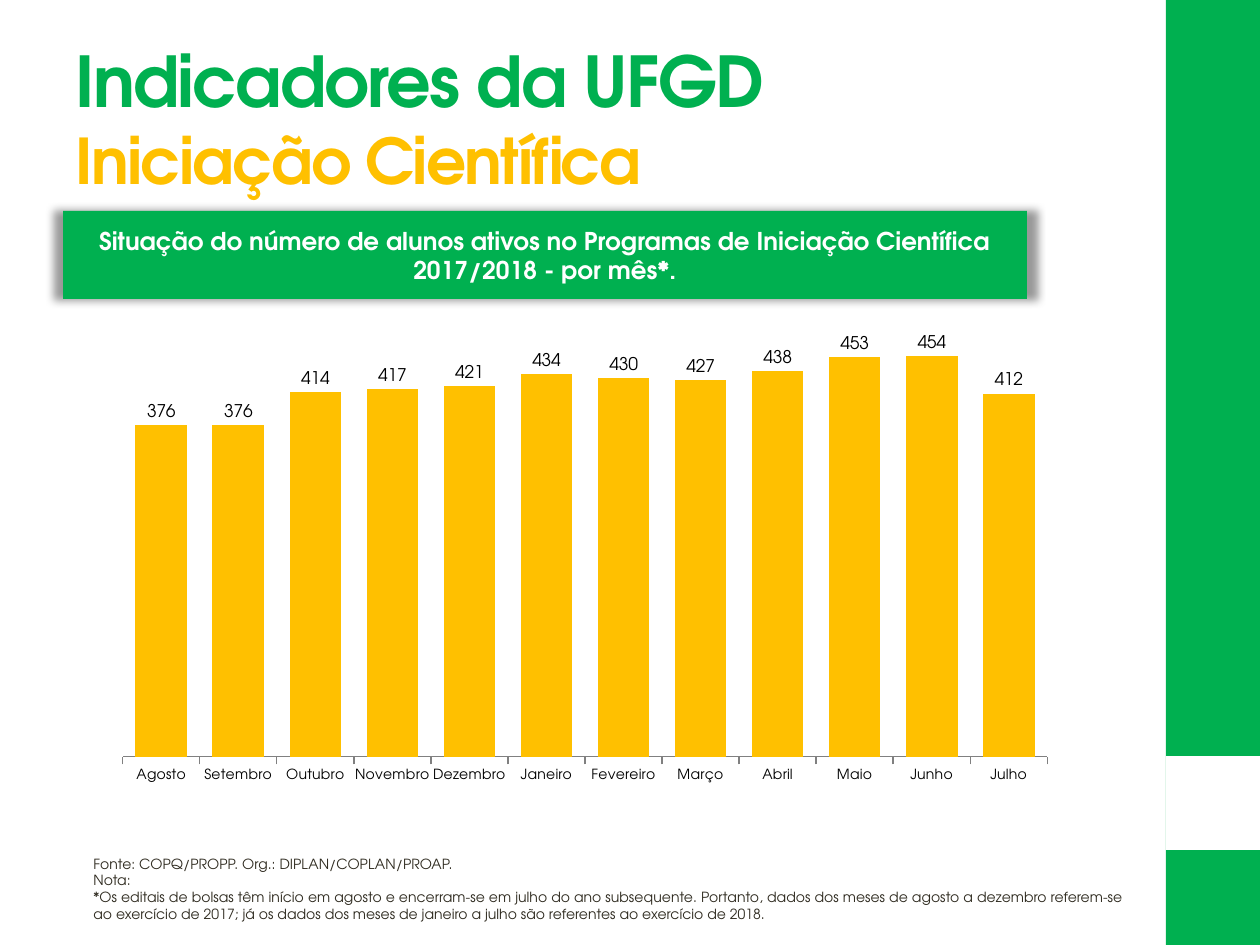
import pptx
import pptx.util
import pptx.chart.data
import pptx.dml.color
import pptx.enum.chart
import pptx.enum.shapes
import pptx.enum.text
import pptx.oxml
import pptx.oxml.ns

ALIGN = pptx.enum.text.PP_ALIGN
ANCHOR = pptx.enum.text.MSO_ANCHOR


class Theme:
    font = "TeX Gyre Adventor"
    green, amber, white = "00B050", "FFC000", "FFFFFF"
    ink, black, grey = "2F2B20", "000000", "808080"
    title, subtitle, banner, label, small = 40, 36, 14, 10, 8


def px(length):
    return pptx.util.Emu(round(length * 914400 / 126))


def rgb(colour):
    return pptx.dml.color.RGBColor.from_string(colour)


def format_font(font, size, colour, bold=False):
    font.name = Theme.font
    font.size = pptx.util.Pt(size)
    font.bold = bold
    font.color.rgb = rgb(colour)


def write(para, text, *, size, colour, bold=False, align=None, spacing=None, before=None):
    span = para.add_run()
    span.text = text
    format_font(span.font, size, colour, bold)
    if align is not None:
        para.alignment = align
    if before is not None:
        para.space_before = pptx.util.Pt(before)
    if spacing is not None:
        span.font._element.set("spc", str(spacing * 100))


class Page:
    def __init__(self, deck, theme):
        self.theme = theme
        self.slide = deck.slides.add_slide(deck.slide_layouts[6])

    def rectangle(self, left, top, width, height, colour):
        box = self.slide.shapes.add_shape(
            pptx.enum.shapes.MSO_SHAPE.RECTANGLE, px(left), px(top), px(width), px(height))
        box.shadow.inherit = False
        box.fill.solid()
        box.fill.fore_color.rgb = rgb(colour)
        box.line.fill.background()
        frame = box.text_frame
        frame.word_wrap = True
        frame.vertical_anchor = ANCHOR.MIDDLE
        return box

    def glow_shadow(self, box):
        effects = box._element.spPr.find(pptx.oxml.ns.qn("a:effectLst"))
        effects.append(pptx.oxml.parse_xml(
            f'<a:outerShdw {pptx.oxml.ns.nsdecls("a")} blurRad="63500" sx="102000" sy="102000" '
            'algn="ctr" rotWithShape="0"><a:srgbClr val="000000"><a:alpha val="40000"/>'
            '</a:srgbClr></a:outerShdw>'))

    def text_box(self, left, top, width, height, anchor=ANCHOR.TOP):
        box = self.slide.shapes.add_textbox(px(left), px(top), px(width), px(height))
        box.text_frame.word_wrap = True
        box.text_frame.vertical_anchor = anchor
        return box.text_frame

    def column_chart(self, left, top, width, height, name, values, plot_area):
        theme = self.theme
        data = pptx.chart.data.CategoryChartData()
        data.categories = list(values)
        data.add_series(name, list(values.values()))
        chart = self.slide.shapes.add_chart(
            pptx.enum.chart.XL_CHART_TYPE.COLUMN_CLUSTERED,
            px(left), px(top), px(width), px(height), data).chart
        chart.has_legend = chart.has_title = False
        format_font(chart.font, theme.label, theme.black)

        # Axes
        months = chart.category_axis
        months.major_tick_mark = pptx.enum.chart.XL_TICK_MARK.OUTSIDE
        months.format.line.color.rgb = rgb(theme.grey)
        format_font(months.tick_labels.font, theme.small, theme.black)
        scale = chart.value_axis
        scale.minimum_scale, scale.maximum_scale = 0, 500
        scale.has_major_gridlines = False
        scale.visible = False

        # Columns and their values
        plot = chart.plots[0]
        plot.gap_width = 49
        plot.vary_by_categories = False
        fill = plot.series[0].format.fill
        fill.solid()
        fill.fore_color.rgb = rgb(theme.amber)
        plot.has_data_labels = True
        labels = plot.data_labels
        labels.show_value = True
        labels.position = pptx.enum.chart.XL_LABEL_POSITION.OUTSIDE_END
        format_font(labels.font, theme.label, theme.black)

        # Fixed inner plot area
        area = chart._chartSpace.chart.plotArea
        for old in area.findall(pptx.oxml.ns.qn("c:layout")):
            area.remove(old)
        modes = "".join(f'<c:{side}Mode val="edge"/>' for side in "xy")
        sizes = "".join(f'<c:{key} val="{part}"/>' for key, part in zip("xywh", plot_area))
        area.insert(0, pptx.oxml.parse_xml(
            f'<c:layout {pptx.oxml.ns.nsdecls("c")}><c:manualLayout>'
            f'<c:layoutTarget val="inner"/>{modes}{sizes}</c:manualLayout></c:layout>'))


def main():
    deck = pptx.Presentation()
    deck.slide_width, deck.slide_height = px(1260), px(945)
    theme = Theme()
    page = Page(deck, theme)

    # Side band
    page.rectangle(1166, 0, 94, 945, theme.green)
    page.rectangle(1166, 756, 94, 94, theme.white)

    # Title
    para = page.text_box(63, 38, 1050, 158, ANCHOR.MIDDLE).paragraphs[0]
    write(para, "Indicadores da UFGD", size=theme.title, colour=theme.green, bold=True, spacing=-1)
    para.add_line_break()
    write(para, "Iniciação Científica", size=theme.subtitle, colour=theme.amber, bold=True, spacing=-1)

    # Banner
    banner = page.rectangle(63, 211, 964, 88, theme.green)
    page.glow_shadow(banner)
    write(banner.text_frame.paragraphs[0],
          "Situação do número de alunos ativos no Programas de Iniciação Científica "
          "2017/2018 - por mês*.",
          size=theme.banner, colour=theme.white, bold=True, align=ALIGN.CENTER, before=2.8)

    # Source and note
    notes = page.text_box(81, 849, 1056, 54)
    lines = [
        ("Fonte: COPQ/PROPP. Org.: DIPLAN/COPLAN/PROAP.", None),
        ("Nota:", None),
        ("*Os editais de bolsas têm início em agosto e encerram-se em julho do ano subsequente. "
         "Portanto, dados dos meses de agosto a dezembro referem-se ao exercício de 2017; já os "
         "dados dos meses de janeiro a julho são referentes ao exercício de 2018.", ALIGN.JUSTIFY),
    ]
    for index, (text, align) in enumerate(lines):
        para = notes.add_paragraph() if index else notes.paragraphs[0]
        write(para, text, size=theme.small, colour=theme.ink, align=align)

    # Active students by month
    students = {
        "Agosto": 376, "Setembro": 376, "Outubro": 414, "Novembro": 417,
        "Dezembro": 421, "Janeiro": 434, "Fevereiro": 430, "Março": 427,
        "Abril": 438, "Maio": 453, "Junho": 454, "Julho": 412,
    }
    page.column_chart(72, 316, 1016, 490, "Series 1", students, (0.05, 0, 0.91, 0.9))

    deck.save("out.pptx")


if __name__ == "__main__":
    main()
